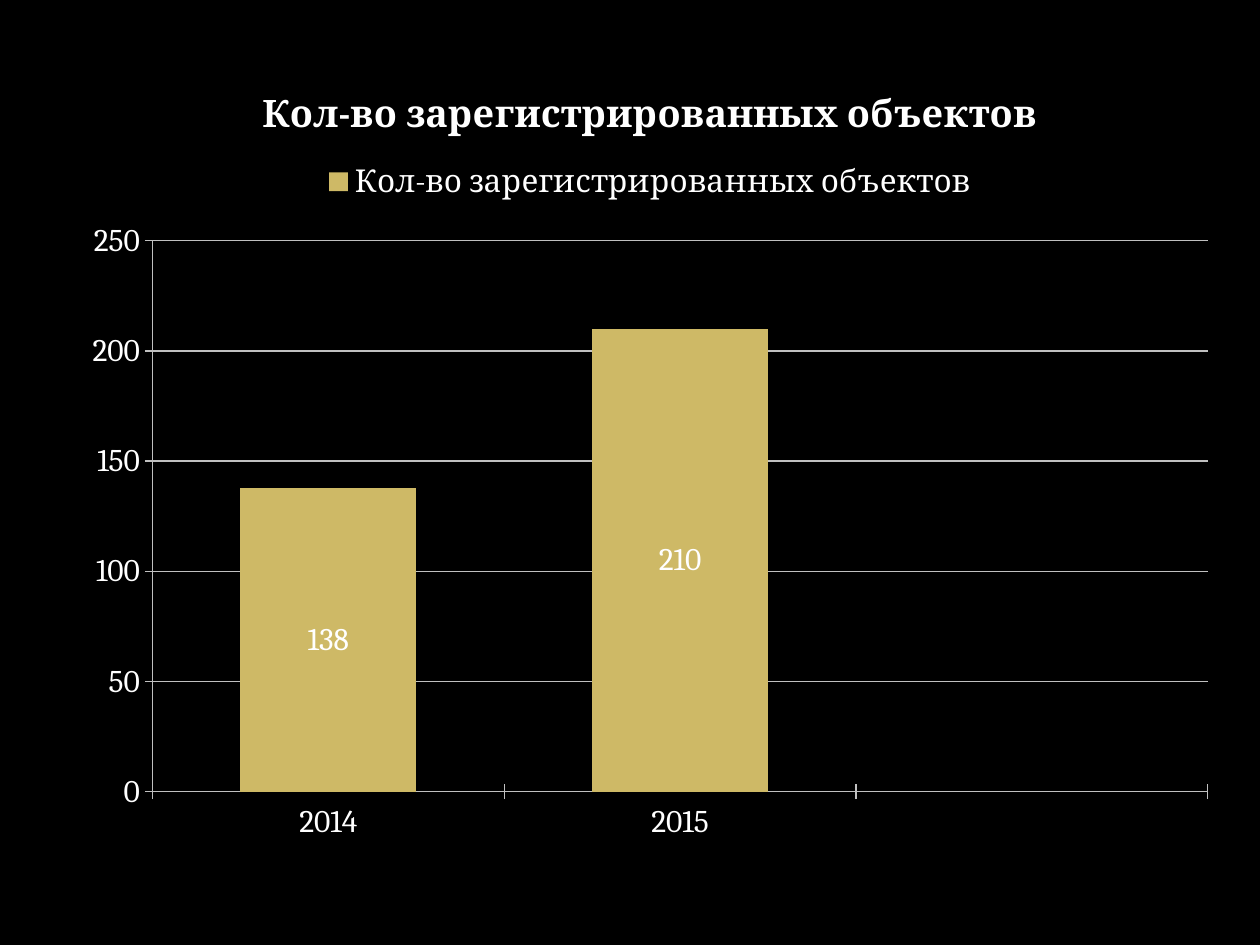
from pptx import Presentation
from pptx.chart.data import CategoryChartData
from pptx.dml.color import RGBColor
from pptx.enum.chart import XL_CHART_TYPE, XL_LABEL_POSITION, XL_LEGEND_POSITION, XL_TICK_MARK
from pptx.util import Inches, Pt

BLACK = RGBColor(0x00, 0x00, 0x00)
WHITE = RGBColor(0xFF, 0xFF, 0xFF)
GOLD = RGBColor(0xCE, 0xB9, 0x66)
GRAY = RGBColor(0xC0, 0xC0, 0xC0)
TITLE = "Кол-во зарегистрированных объектов"


def format_font(font, size=18, bold=False, color=WHITE, name="Cambria"):
    font.size = Pt(size)
    font.bold = bold
    font.name = name
    font.color.rgb = color


def add_text(tf, text, **style):
    r = tf.paragraphs[0].add_run()
    r.text = text
    format_font(r.font, **style)


class SlideBuilder:
    def __init__(self, prs):
        self.line_color = GRAY
        self.line_width = Pt(0.75)
        self.s = prs.slides.add_slide(prs.slide_layouts[6])

    def background(self, color):
        fill = self.s.background.fill
        fill.solid()
        fill.fore_color.rgb = color

    def style_line(self, line):
        line.color.rgb = self.line_color
        line.width = self.line_width

    def column_chart(self, title, categories, values, color, left, top, width, height):
        data = CategoryChartData()
        data.categories = categories
        data.add_series(title, values)
        chart = self.s.shapes.add_chart(
            XL_CHART_TYPE.COLUMN_STACKED, Inches(left), Inches(top),
            Inches(width), Inches(height), data).chart
        format_font(chart.font)

        chart.has_title = True
        add_text(chart.chart_title.text_frame, title, size=21.6, bold=True)
        chart.chart_title.include_in_layout = False
        chart.has_legend = True
        chart.legend.position = XL_LEGEND_POSITION.TOP
        chart.legend.include_in_layout = False

        for axis in (chart.category_axis, chart.value_axis):
            axis.major_tick_mark = XL_TICK_MARK.CROSS
            self.style_line(axis.format.line)
        axis = chart.value_axis
        axis.minimum_scale, axis.maximum_scale, axis.major_unit = 0, 250, 50
        axis.has_major_gridlines = True
        self.style_line(axis.major_gridlines.format.line)

        plot = chart.plots[0]
        plot.gap_width = 100
        plot.overlap = 100
        plot.vary_by_categories = False
        series = plot.series[0]
        series.format.fill.solid()
        series.format.fill.fore_color.rgb = color
        labels = series.data_labels
        labels.show_value = True
        labels.position = XL_LABEL_POSITION.CENTER
        format_font(labels.font)


def main():
    prs = Presentation()
    prs.slide_width = Inches(10)
    prs.slide_height = Inches(7.5)
    slide = SlideBuilder(prs)
    slide.background(BLACK)
    slide.column_chart(TITLE, ["2014", "2015", ""], [138, 210, None], GOLD,
                       left=0.55, top=0.47, width=9.22, height=6.33)
    prs.save("out.pptx")


if __name__ == "__main__":
    main()
